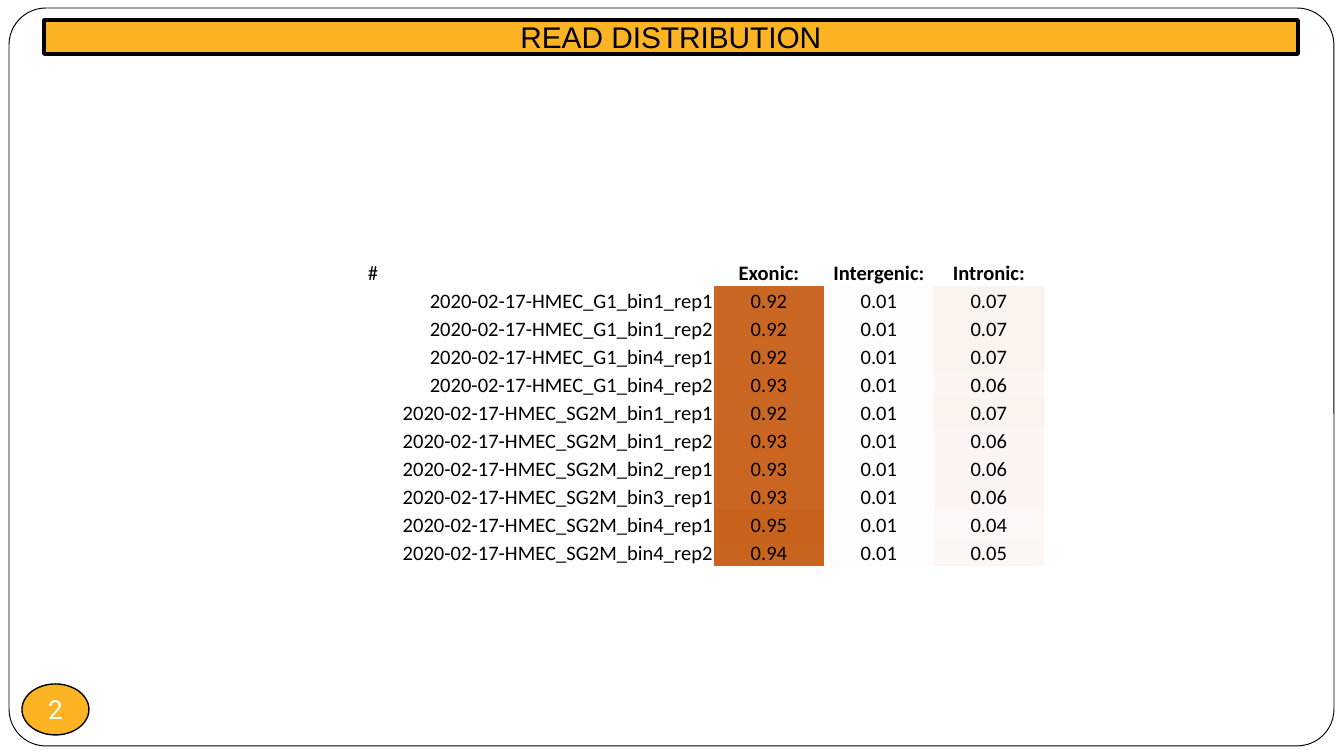
import dataclasses

import lxml.etree
import pptx
import pptx.dml.color
import pptx.enum.shapes
import pptx.enum.text
import pptx.oxml
import pptx.oxml.ns
import pptx.util

SCALE = 914400 / 134.4
ALIGN = pptx.enum.text.PP_ALIGN
ANCHOR = pptx.enum.text.MSO_ANCHOR
SHAPE = pptx.enum.shapes.MSO_SHAPE
PLAIN = "{2D5ABB26-0587-4C30-8999-92F81FD0307C}"


@dataclasses.dataclass(frozen=True)
class Theme:
    ink: str = "000000"
    paper: str = "FFFFFF"
    gold: str = "FCB424"
    heat: str = "C65A11"
    head: str = "Arial"
    cell: str = "Calibri"
    badge: str = "Roboto"
    large: int = 16
    mid: int = 14
    small: int = 11


THEME = Theme()

HEADS = ["#", "Exonic:", "Intergenic:", "Intronic:"]
READS = [
    ("G1_bin1_rep1", 0.92, 0.01, 0.07),
    ("G1_bin1_rep2", 0.92, 0.01, 0.07),
    ("G1_bin4_rep1", 0.92, 0.01, 0.07),
    ("G1_bin4_rep2", 0.93, 0.01, 0.06),
    ("SG2M_bin1_rep1", 0.92, 0.01, 0.07),
    ("SG2M_bin1_rep2", 0.93, 0.01, 0.06),
    ("SG2M_bin2_rep1", 0.93, 0.01, 0.06),
    ("SG2M_bin3_rep1", 0.93, 0.01, 0.06),
    ("SG2M_bin4_rep1", 0.95, 0.01, 0.04),
    ("SG2M_bin4_rep2", 0.94, 0.01, 0.05),
]


def px(size):
    return pptx.util.Emu(round(size * SCALE))


def color(code):
    return pptx.dml.color.RGBColor.from_string(code)


def blend(share):
    pairs = zip(color(THEME.paper), color(THEME.heat))
    return "".join(f"{round(a + (b - a) * share):02X}" for a, b in pairs)


def write(frame, text, font, size, ink=THEME.ink, bold=False, align=ALIGN.CENTER):
    par = frame.paragraphs[0]
    par.alignment = align
    run = par.add_run()
    run.text = text
    run.font.name = font
    run.font.size = pptx.util.Pt(size)
    run.font.bold = bold
    run.font.color.rgb = color(ink)


def paint(shape, fill, width):
    shape.fill.solid()
    shape.fill.fore_color.rgb = color(fill)
    shape.line.color.rgb = color(THEME.ink)
    shape.line.width = pptx.util.Pt(width)


def add_form(slide, kind, box, fill, width):
    shape = slide.shapes.add_shape(kind, *map(px, box))
    shape.shadow.inherit = False
    paint(shape, fill, width)
    return shape


def add_frame(slide, box):
    shape = add_form(slide, SHAPE.ROUNDED_RECTANGLE, box, THEME.paper, 0.5)
    shape.adjustments[0] = 0.05
    shape.element.getparent().insert(2, shape.element)


def add_title(slide, box, text):
    title = slide.shapes.title
    title.left, title.top, title.width, title.height = map(px, box)
    qn = pptx.oxml.ns.qn
    form = lxml.etree.SubElement(title.element.spPr, qn("a:prstGeom"), prst="roundRect")
    lxml.etree.SubElement(form, qn("a:avLst"))
    paint(title, THEME.gold, 2)
    frame = title.text_frame
    frame.auto_size = pptx.enum.text.MSO_AUTO_SIZE.NONE
    frame.vertical_anchor = ANCHOR.MIDDLE
    write(frame, text, THEME.head, THEME.large)


def add_badge(slide, box, text):
    shape = add_form(slide, SHAPE.OVAL, box, THEME.gold, 0.75)
    frame = shape.text_frame
    frame.margin_left = frame.margin_right = 0
    frame.margin_top = frame.margin_bottom = 0
    frame.word_wrap = False
    frame.vertical_anchor = ANCHOR.MIDDLE
    write(frame, text, THEME.badge, THEME.mid, ink=THEME.paper)


def fill_cell(cell, text, share=None, **style):
    cell.margin_left = cell.margin_right = cell.margin_top = px(1)
    cell.margin_bottom = 0
    cell.vertical_anchor = ANCHOR.BOTTOM
    if share is None:
        cell.fill.background()
    else:
        cell.fill.solid()
        cell.fill.fore_color.rgb = color(blend(share))
    write(cell.text_frame, text, THEME.cell, THEME.small, **style)


def add_reads(slide, box, lead):
    left, top, width, height = box
    count = len(READS) + 1
    holder = slide.shapes.add_table(count, len(HEADS), *map(px, box))
    table = holder.table
    table.first_row = table.horz_banding = False
    for node in holder.element.iter(pptx.oxml.ns.qn("a:tableStyleId")):
        node.text = PLAIN
    for row in table.rows:
        row.height = px(height / count)
    for col, column in enumerate(table.columns):
        column.width = px((width - lead) / (len(HEADS) - 1) if col else lead)
    for col, head in enumerate(HEADS):
        align = ALIGN.CENTER if col else ALIGN.LEFT
        fill_cell(table.cell(0, col), head, bold=col > 0, align=align)
    for row, (name, *shares) in enumerate(READS, 1):
        fill_cell(table.cell(row, 0), f"2020-02-17-HMEC_{name}", align=ALIGN.RIGHT)
        for col, share in enumerate(shares, 1):
            fill_cell(table.cell(row, col), f"{share:.2f}", share)


def main():
    deck = pptx.Presentation()
    deck.slide_width, deck.slide_height = px(1344), px(756)
    slide = deck.slides.add_slide(deck.slide_layouts[5])
    add_frame(slide, (9, 8, 1325, 738))
    add_badge(slide, (22, 684, 67, 51), "2")
    add_title(slide, (44, 20, 1254, 34), "READ DISTRIBUTION")
    add_reads(slide, (367, 258, 677, 308), 347)
    deck.save("out.pptx")


if __name__ == "__main__":
    main()
